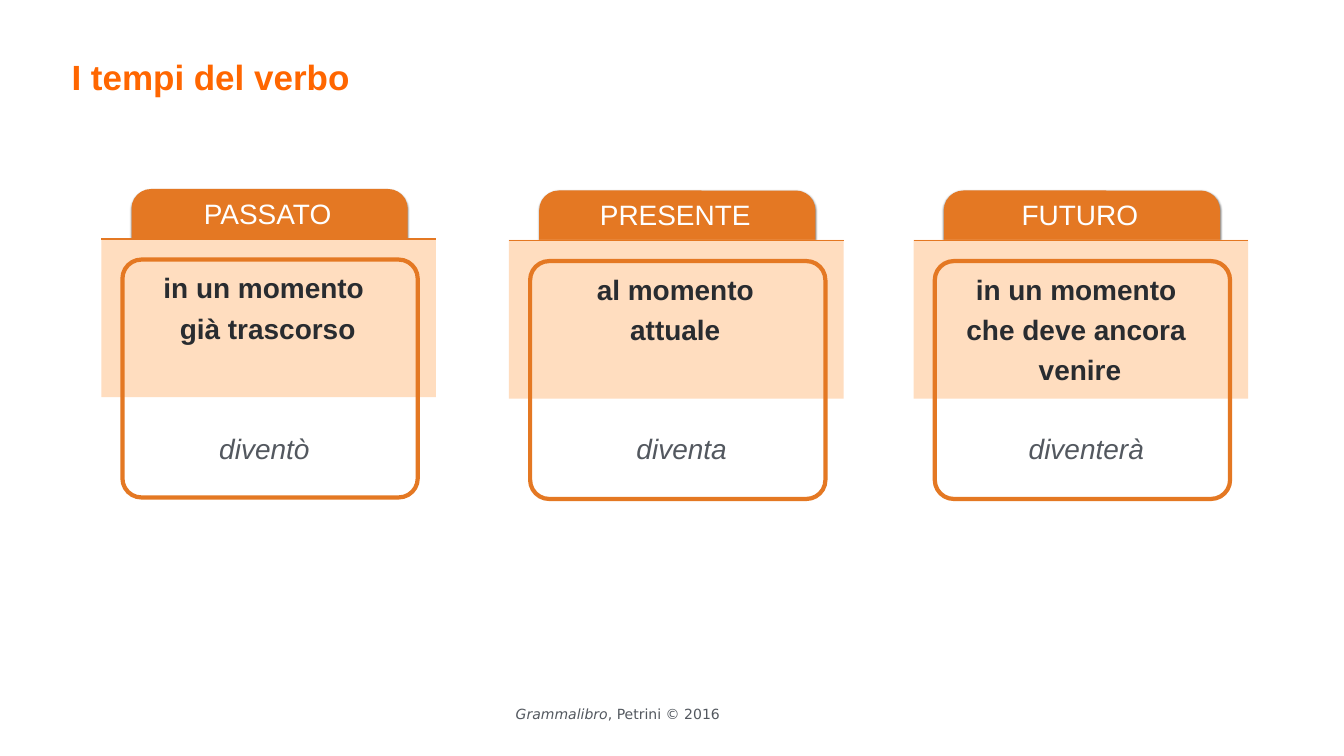
from lxml import etree
from pptx import Presentation
from pptx.dml.color import RGBColor
from pptx.enum import shapes, text
from pptx.oxml.ns import qn
from pptx.util import Inches, Pt

ORANGE, PEACH, GREY = "E47823", "FFDDBF", "53585F"
SHAPE = shapes.MSO_SHAPE
TOP, MIDDLE = text.MSO_ANCHOR.TOP, text.MSO_ANCHOR.MIDDLE
LEFT, CENTER = text.PP_ALIGN.LEFT, text.PP_ALIGN.CENTER

# left, top, tense, meaning, example, centre of example
CARDS = [
    (2.01, 4.73, "PASSATO", "in un momento \ngià trascorso", "diventò", 5.25),
    (10.1, 4.76, "PRESENTE", "al momento\nattuale", "diventa", 13.53),
    (18.13, 4.76, "FUTURO", "in un momento \nche deve ancora \nvenire",
     "diventerà", 21.56),
]


def rgb(value):
    return RGBColor.from_string(value)


def write(sp, content, size, color, spacing, bold=False, italic=False,
          align=CENTER, anchor=MIDDLE, inset=(0.06, 0.06), font="Arial"):
    tf = sp.text_frame
    tf.text = content
    tf.word_wrap = True
    tf.vertical_anchor = anchor
    tf.margin_left = tf.margin_right = Inches(inset[0])
    tf.margin_top = tf.margin_bottom = Inches(inset[1])
    for p in tf.paragraphs:
        p.alignment = align
        p.line_spacing = spacing
        p.space_before = Pt(0)
        for r in p.runs:
            r.font.name, r.font.size = font, Pt(size)
            r.font.bold, r.font.italic = bold, italic
            r.font.color.rgb = rgb(color)
    return tf


def add_text(s, x, y, w, h, content, *args, **style):
    sp = s.shapes.add_textbox(Inches(x), Inches(y), Inches(w), Inches(h))
    return write(sp, content, *args, **style)


def add_box(s, kind, x, y, w, h, fill=None, line=None, radius=None):
    sp = s.shapes.add_shape(kind, Inches(x), Inches(y), Inches(w), Inches(h))
    sp.shadow.inherit = False
    if radius:
        sp.adjustments[0] = radius
    if fill:
        sp.fill.solid()
        sp.fill.fore_color.rgb = rgb(fill)
    else:
        sp.fill.background()
    if line:
        sp.line.color.rgb = rgb(line)
        sp.line.width = Pt(6)
    else:
        sp.line.fill.background()
    return sp


def add_shadow(sp):
    effects = sp._element.spPr.find(qn("a:effectLst"))
    shadow = etree.SubElement(effects, qn("a:outerShdw"), blurRad="38100",
                              dist="25400", dir="5400000", rotWithShape="0")
    color = etree.SubElement(shadow, qn("a:srgbClr"), val="000000")
    etree.SubElement(color, qn("a:alpha"), val="50000")


def add_rule(s, x, y, w):
    line = s.shapes.add_connector(shapes.MSO_CONNECTOR.STRAIGHT, Inches(x),
                                  Inches(y), Inches(x + w), Inches(y))
    line.line.color.rgb = rgb(ORANGE)
    line.line.width = Pt(2)
    etree.SubElement(line._element.spPr, qn("a:effectLst"))


def add_card(s, x, y, tense, meaning, example, example_center):
    # Tab, band and rule
    add_shadow(add_box(s, SHAPE.ROUNDED_RECTANGLE, x + 0.6, y - 0.98,
                       5.48, 3.52, fill=ORANGE, radius=0.11))
    add_box(s, SHAPE.RECTANGLE, x, y, 6.64, 3.15, fill=PEACH)
    add_rule(s, x, y + 0.01, 6.64)
    # Tense, meaning and example
    add_text(s, x + 1.23, y - 0.95, 4.14, 0.83, tense, 40, "FFFFFF", 1.1,
             anchor=TOP, inset=(0.1, 0.05))
    add_text(s, x + 0.37, y + 0.45, 5.86, 2.51, meaning, 40, "292C30", 1.2,
             bold=True, anchor=TOP)
    add_text(s, example_center - 1.48, 8.38, 2.95, 0.9, example, 40, GREY, 1.2,
             italic=True)
    # Outline frame
    add_box(s, SHAPE.ROUNDED_RECTANGLE, x + 0.42, y + 0.42, 5.86, 4.72,
            line=ORANGE, radius=0.08)


def add_title(s, content):
    sp = s.shapes.title
    sp.left, sp.top = Inches(1.36), Inches(0.97)
    sp.width, sp.height = Inches(10.26), Inches(1.02)
    write(sp, content, 50, "FF6600", 1.1, bold=True, align=LEFT)


def add_footer(s):
    tf = add_text(s, 10.1, 14.03, 4.32, 0.36, "Grammalibro", 20, GREY, 0.7,
                  italic=True, font="DejaVu Sans")
    tf.word_wrap = False
    r = tf.paragraphs[0].add_run()
    r.text = ", Petrini © 2016"
    r.font.name, r.font.size = "DejaVu Sans", Pt(20)
    r.font.color.rgb = rgb(GREY)


def main():
    prs = Presentation()
    prs.slide_width, prs.slide_height = Inches(26.67), Inches(15)
    s = prs.slides.add_slide(prs.slide_layouts[5])
    add_title(s, "I tempi del verbo")
    for card in CARDS:
        add_card(s, *card)
    add_footer(s)
    prs.save("out.pptx")


if __name__ == "__main__":
    main()
